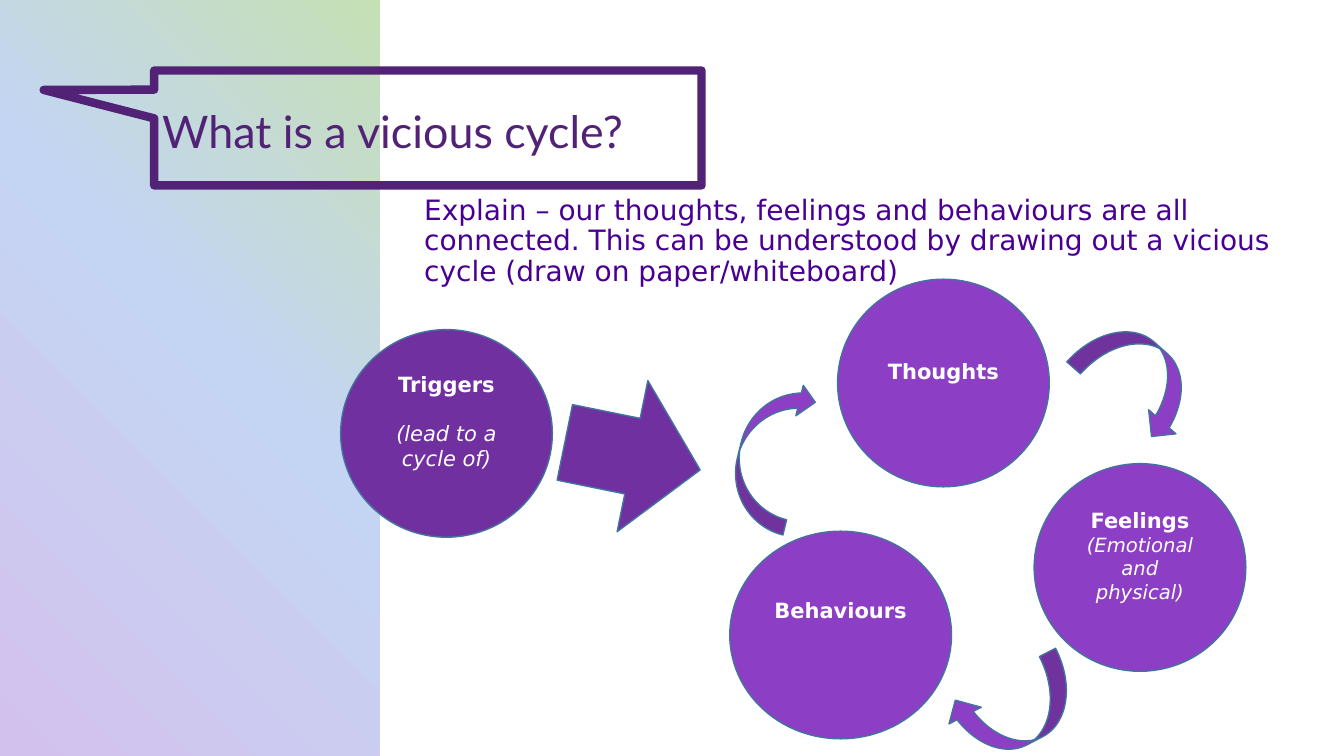
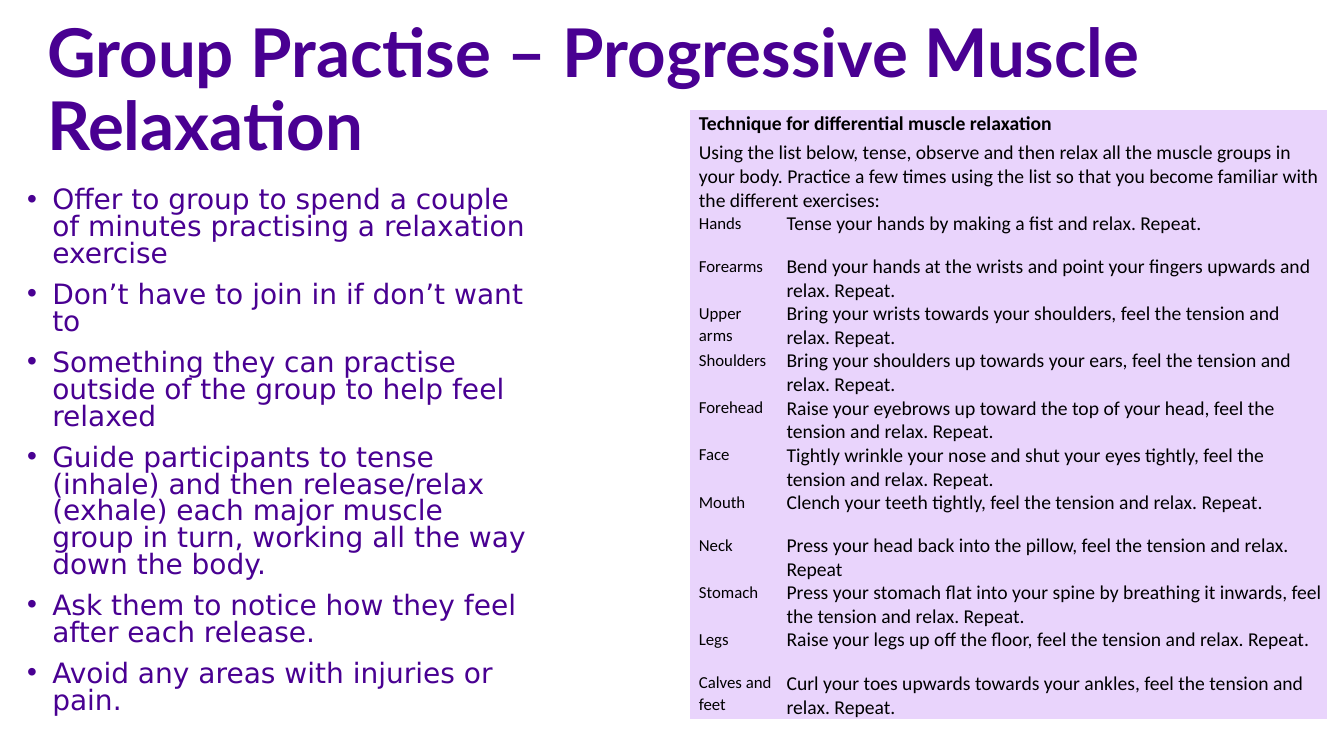
from lxml import etree
from pptx import Presentation, util as u
from pptx.dml.color import RGBColor
from pptx.enum import shapes, text
from pptx.oxml import parse_xml
from pptx.oxml.ns import nsdecls, qn

INDIGO = RGBColor(0x49, 0x00, 0x92)
PLUM = RGBColor(0x51, 0x22, 0x75)
PURPLE = RGBColor(0x70, 0x30, 0xA0)
VIOLET = RGBColor(0x8C, 0x3F, 0xC5)
EDGE = RGBColor(0x43, 0x73, 0x9E)
LILAC = RGBColor(0xE9, 0xD4, 0xFC)
PANEL_STOPS = [
    (0, RGBColor(0xD3, 0xC1, 0xED)),
    (56, RGBColor(0xC4, 0xD5, 0xF3)),
    (100, RGBColor(0xC5, 0xE0, 0xB4)),
]
BLACK = RGBColor(0, 0, 0)
WHITE = RGBColor(0xFF, 0xFF, 0xFF)
HEADING, BODY, TABLE = "Lato", "DejaVu Sans", "Calibri"
NO_TABLE_STYLE = "{2D5ABB26-0587-4C30-8999-92F81FD0307C}"
SHAPE = shapes.MSO_SHAPE


class Deck:
    def __init__(self):
        self.prs = Presentation()
        self.prs.slide_width, self.prs.slide_height = u.Pt(960), u.Pt(540)
        self.s = None

    def slide(self):
        self.s = self.prs.slides.add_slide(self.prs.slide_layouts[6])

    def add_text(self, p, content, color, fmt, para=None):
        for name, value in (para or {}).items():
            setattr(p, name, value)
        r = p.add_run()
        r.text = content
        r.font.color.rgb = color
        for name, value in fmt.items():
            setattr(r.font, name, value)

    def textbox(self, box, lines, color, fmt, para, anchor=text.MSO_ANCHOR.TOP,
                inset=None, bullet=False):
        tf = self.s.shapes.add_textbox(*map(u.Pt, box)).text_frame
        tf.word_wrap = True
        tf.vertical_anchor = anchor
        if inset is not None:
            for side in ("left", "top", "right", "bottom"):
                setattr(tf, f"margin_{side}", u.Pt(inset))
        for i, line in enumerate(lines):
            p = tf.add_paragraph() if i else tf.paragraphs[0]
            self.add_text(p, line, color, fmt, para)
            if bullet:
                self.bullet(p)

    def bullet(self, p):
        pPr = p._p.get_or_add_pPr()
        pPr.set("marL", str(u.Pt(18)))
        pPr.set("indent", str(-u.Pt(18)))
        etree.SubElement(pPr, qn("a:buFont")).set("typeface", "Arial")
        etree.SubElement(pPr, qn("a:buChar")).set("char", "•")

    def title(self, box, line, color, size, bold=False, **options):
        fmt = {"name": HEADING, "size": u.Pt(size), "bold": bold}
        self.textbox(box, [line], color, fmt, {"line_spacing": 0.9}, **options)

    def body(self, box, lines, spacing, bullet=False):
        self.textbox(box, lines, INDIGO, {"name": BODY, "size": u.Pt(20)},
                     {"line_spacing": spacing, "space_before": u.Pt(10)}, bullet=bullet)

    def shape(self, kind, box, fill=None, line=EDGE, width=1, rotation=0):
        sp = self.s.shapes.add_shape(kind, *map(u.Pt, box))
        sp.shadow.inherit = False
        sp.rotation = rotation
        if fill is None:
            sp.fill.background()
        else:
            sp.fill.solid()
            sp.fill.fore_color.rgb = fill
        if line is None:
            sp.line.fill.background()
        else:
            sp.line.color.rgb = line
            sp.line.width = u.Pt(width)
        return sp

    def gradient_panel(self, box, stops):
        sp = self.shape(SHAPE.RECTANGLE, box, WHITE, None)
        marks = "".join(f'<a:gs pos="{pos * 1000}"><a:srgbClr val="{color}"/></a:gs>'
                        for pos, color in stops)
        grad = parse_xml(
            f'<a:gradFill {nsdecls("a")} rotWithShape="1"><a:gsLst>{marks}</a:gsLst>'
            '<a:path path="circle"><a:fillToRect t="100000" r="100000"/></a:path>'
            '</a:gradFill>')
        spPr = sp._element.spPr
        spPr.replace(spPr.find(qn("a:solidFill")), grad)

    def callout(self, box):
        sp = self.shape(SHAPE.RECTANGULAR_CALLOUT, box, None, PLUM, 6)
        sp.adjustments[0], sp.adjustments[1] = -0.702, -0.331

    def circle(self, box, fill, name, detail=None, size=15, gap=0, lift=0):
        tf = self.shape(SHAPE.OVAL, box, fill).text_frame
        tf.word_wrap = True
        tf.vertical_anchor = text.MSO_ANCHOR.MIDDLE
        tf.margin_bottom = u.Pt(3.6 + lift)
        centred = {"alignment": text.PP_ALIGN.CENTER}
        self.add_text(tf.paragraphs[0], name, WHITE,
                      {"name": BODY, "size": u.Pt(15), "bold": True}, centred)
        if detail:
            self.add_text(tf.add_paragraph(), detail, WHITE,
                          {"name": BODY, "size": u.Pt(size), "italic": True},
                          {**centred, "space_before": u.Pt(gap)})

    def cell(self, cell, content, size=14, spacing=1.0, before=2.6, bold=False):
        cell.fill.solid()
        cell.fill.fore_color.rgb = LILAC
        for side in ("left", "top", "right", "bottom"):
            setattr(cell, f"margin_{side}", 0)
        p = cell.text_frame.paragraphs[0]
        self.add_text(p, content, BLACK, {"name": TABLE, "size": u.Pt(size), "bold": bold},
                      {"line_spacing": spacing, "space_before": u.Pt(before)})
        p._p.get_or_add_pPr().set("marL", str(u.Pt(6)))

    def exercise_table(self, left, top, widths, heading, intro, exercises):
        heights = [22.32, 44.64] + [30.96] * len(exercises)
        frame = self.s.shapes.add_table(len(heights), 2, u.Pt(left), u.Pt(top),
                                        u.Pt(sum(widths)), u.Pt(sum(heights)))
        table = frame.table
        table.first_row = table.horz_banding = False
        table._tbl.tblPr.find(qn("a:tableStyleId")).text = NO_TABLE_STYLE
        for column, width in zip(table.columns, widths):
            column.width = u.Pt(width)
        for row, height in zip(table.rows, heights):
            row.height = u.Pt(height)
        for row in range(2):
            table.cell(row, 0).merge(table.cell(row, 1))
        self.cell(table.cell(0, 0), heading, spacing=1.07, before=5, bold=True)
        self.cell(table.cell(1, 0), intro)
        for row, (part, action) in enumerate(exercises, 2):
            self.cell(table.cell(row, 0), part, size=12, spacing=1.07)
            self.cell(table.cell(row, 1), action)


def vicious_cycle(deck):
    deck.slide()
    deck.body((295.92, 136.8, 645.12, 378), [
        "Explain – our thoughts, feelings and behaviours are all connected. This can be "
        "understood by drawing out a vicious cycle (draw on paper/whiteboard)"], 0.9)
    deck.gradient_panel((0, 0, 271.44, 540), PANEL_STOPS)
    deck.callout((110.16, 50.4, 390.96, 82.08))
    deck.title((108.72, 71.28, 410.4, 82.08), "What is a vicious cycle?", PLUM, 32, inset=7.2)

    wide, high = 151.2, 148.32
    deck.circle((243.36, 235.44, wide, high), PURPLE, "Triggers", "(lead to a cycle of)",
                gap=17.5, lift=17.5)
    deck.circle((598.32, 199.44, wide, high), VIOLET, "Thoughts", lift=17.5)
    deck.circle((738.72, 331.2, wide, high), VIOLET, "Feelings",
                "(Emotional and physical)", size=14, lift=17.5)
    deck.circle((521.28, 379.44, 158.4, high), VIOLET, "Behaviours", lift=35)

    for box, rotation in [
        ((767.52, 244.08, 93.6, 51.84), 41.4),
        ((677.52, 481.68, 93.6, 51.84), 152.6),
        ((496.08, 301.68, 108.72, 44.64), 283.7),
    ]:
        deck.shape(SHAPE.CURVED_DOWN_ARROW, box, VIOLET, rotation=rotation)
    deck.shape(SHAPE.DOWN_ARROW, (396.72, 276.48, 110.16, 98.64), PURPLE, rotation=281.5)


def muscle_relaxation(deck):
    deck.slide()
    deck.title((26.64, 13.68, 828, 104.4), "Group Practise – Progressive Muscle Relaxation",
               INDIGO, 48, bold=True, anchor=text.MSO_ANCHOR.MIDDLE)
    deck.body((12.24, 131.04, 375.84, 402), [
        "Offer to group to spend a couple of minutes practising a relaxation exercise",
        "Don’t have to join in if don’t want to",
        "Something they can practise outside of the group to help feel relaxed",
        "Guide participants to tense (inhale) and then release/relax (exhale) each major "
        "muscle group in turn, working all the way down the body.",
        "Ask them to notice how they feel after each release.",
        "Avoid any areas with injuries or pain.",
    ], 0.8, bullet=True)
    deck.exercise_table(
        493.2, 78.48, (62.64, 392.4),
        "Technique for differential muscle relaxation",
        "Using the list below, tense, observe and then relax all the muscle groups in your "
        "body. Practice a few times using the list so that you become familiar with the "
        "different exercises:",
        [
            ("Hands", "Tense your hands by making a fist and relax. Repeat."),
            ("Forearms", "Bend your hands at the wrists and point your fingers upwards "
                         "and relax. Repeat."),
            ("Upper arms", "Bring your wrists towards your shoulders, feel the tension "
                           "and relax. Repeat."),
            ("Shoulders", "Bring your shoulders up towards your ears, feel the tension "
                          "and relax. Repeat."),
            ("Forehead", "Raise your eyebrows up toward the top of your head, feel the "
                         "tension and relax. Repeat."),
            ("Face", "Tightly wrinkle your nose and shut your eyes tightly, feel the "
                     "tension and relax. Repeat."),
            ("Mouth", "Clench your teeth tightly, feel the tension and relax. Repeat."),
            ("Neck", "Press your head back into the pillow, feel the tension and relax. "
                     "Repeat"),
            ("Stomach", "Press your stomach flat into your spine by breathing it inwards, "
                        "feel the tension and relax. Repeat."),
            ("Legs", "Raise your legs up off the floor, feel the tension and relax. Repeat."),
            ("Calves and feet", "Curl your toes upwards towards your ankles, feel the "
                                "tension and relax. Repeat."),
        ])


def main():
    deck = Deck()
    vicious_cycle(deck)
    muscle_relaxation(deck)
    deck.prs.save("out.pptx")


if __name__ == "__main__":
    main()
